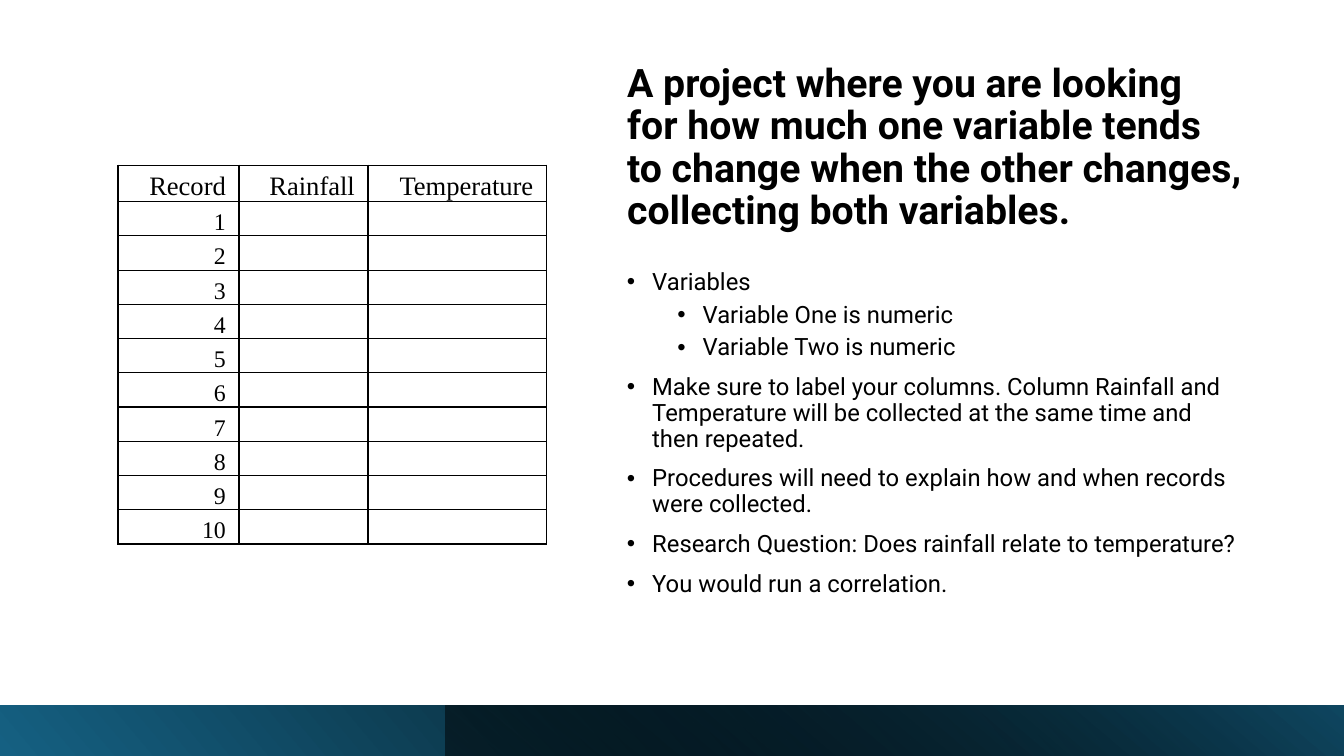
from dataclasses import dataclass

import lxml.etree
import pptx
import pptx.dml.color
import pptx.enum.shapes
import pptx.enum.text
import pptx.oxml.ns
import pptx.util

Inches = pptx.util.Inches
Pt = pptx.util.Pt
qn = pptx.oxml.ns.qn

BLACK = "000000"
TITLE = (
    "A project where you are looking for how much one variable tends "
    "to change when the other changes, collecting both variables."
)
HEADINGS = ("Record", "Rainfall", "Temperature")
COLUMN_WIDTHS = (1.2, 1.28, 1.77)
RECORD_COUNT = 10
HEADING_HEIGHT = 0.36
RECORD_HEIGHT = 0.34


@dataclass(frozen=True)
class Point:
    text: str
    level: int = 0


@dataclass(frozen=True)
class GradientStop:
    position: float
    colour: str
    opacity: int = 100


@dataclass(frozen=True)
class Band:
    left: float
    width: float
    angle: float
    stops: tuple[GradientStop, GradientStop]


POINTS = (
    Point("Variables"),
    Point("Variable One is numeric", 1),
    Point("Variable Two is numeric", 1),
    Point("Make sure to label your columns. Column Rainfall and Temperature "
          "will be collected at the same time and then repeated."),
    Point("Procedures will need to explain how and when records were collected."),
    Point("Research Question: Does rainfall relate to temperature?"),
    Point("You would run a correlation."),
)
BANDS = (
    Band(0, 13.33, 40, (GradientStop(0, "156082"), GradientStop(0.9, BLACK))),
    Band(4.42, 8.91, 50, (GradientStop(0, BLACK, 50), GradientStop(1, "104862"))),
)


def rgb(colour: str) -> pptx.dml.color.RGBColor:
    return pptx.dml.color.RGBColor.from_string(colour)


def set_font(paragraph, name: str, size: float, bold: bool = False) -> None:
    paragraph.font.name = name
    paragraph.font.size = Pt(size)
    paragraph.font.bold = bold
    paragraph.font.color.rgb = rgb(BLACK)


def write_title(slide) -> None:
    title = slide.shapes.title
    title.left, title.top = Inches(6.12), Inches(0.54)
    title.width, title.height = Inches(6.29), Inches(1.82)
    frame = title.text_frame
    frame.text = TITLE
    frame.word_wrap = True
    frame.auto_size = pptx.enum.text.MSO_AUTO_SIZE.NONE
    frame.vertical_anchor = pptx.enum.text.MSO_ANCHOR.BOTTOM
    heading = frame.paragraphs[0]
    heading.alignment = pptx.enum.text.PP_ALIGN.LEFT
    heading.line_spacing = 0.9
    set_font(heading, "Roboto", 28, bold=True)


def write_points(slide) -> None:
    box = slide.shapes.add_textbox(Inches(6.12), Inches(2.63), Inches(6.29), Inches(3.5))
    frame = box.text_frame
    frame.word_wrap = True
    for index, point in enumerate(POINTS):
        paragraph = frame.add_paragraph() if index else frame.paragraphs[0]
        paragraph.text = point.text
        paragraph.level = point.level
        paragraph.line_spacing = 0.9
        paragraph.space_before = Pt(5 if point.level else 10)
        set_font(paragraph, "Roboto", 17)
        properties = paragraph._p.get_or_add_pPr()
        properties.set("marL", str(Inches(0.25 + 0.5 * point.level)))
        properties.set("indent", str(Inches(-0.25)))
        bullet_font = lxml.etree.Element(qn("a:buFont"), typeface="Arial")
        bullet = lxml.etree.Element(qn("a:buChar"), char="•")
        spacing = properties.find(qn("a:spcBef"))
        spacing.addnext(bullet_font)
        bullet_font.addnext(bullet)


def draw_band(slide, band: Band) -> None:
    bar = slide.shapes.add_shape(
        pptx.enum.shapes.MSO_SHAPE.RECTANGLE,
        Inches(band.left), Inches(7), Inches(band.width), Inches(0.5),
    )
    bar.shadow.inherit = False
    bar.line.fill.background()
    bar.fill.gradient()
    bar.fill.gradient_angle = band.angle
    for target, stop in zip(bar.fill.gradient_stops, band.stops):
        target.position = stop.position
        target.color.rgb = rgb(stop.colour)
    for colour, stop in zip(bar._element.spPr.iter(qn("a:srgbClr")), band.stops):
        if stop.opacity < 100:
            lxml.etree.SubElement(colour, qn("a:alpha"), val=str(stop.opacity * 1000))


def add_borders(cell) -> None:
    properties = cell._tc.get_or_add_tcPr()
    for side in ("a:lnL", "a:lnR", "a:lnT", "a:lnB"):
        border = lxml.etree.SubElement(properties, qn(side), w=str(Pt(1)))
        fill = lxml.etree.SubElement(border, qn("a:solidFill"))
        lxml.etree.SubElement(fill, qn("a:srgbClr"), val=BLACK)


def write_cell(cell, text: str, size: float) -> None:
    add_borders(cell)
    cell.fill.background()
    cell.margin_left = cell.margin_right = Inches(0.13)
    cell.margin_top, cell.margin_bottom = Inches(0.02), Inches(0)
    cell.vertical_anchor = pptx.enum.text.MSO_ANCHOR.BOTTOM
    cell.text = text
    paragraph = cell.text_frame.paragraphs[0]
    paragraph.alignment = pptx.enum.text.PP_ALIGN.RIGHT
    paragraph.line_spacing = 1.07
    set_font(paragraph, "Times New Roman", size)


def draw_records(slide) -> None:
    rows = [HEADINGS] + [(str(number), "", "") for number in range(1, RECORD_COUNT + 1)]
    height = HEADING_HEIGHT + RECORD_COUNT * RECORD_HEIGHT
    records = slide.shapes.add_table(
        len(rows), len(HEADINGS), Inches(1.17), Inches(1.64),
        Inches(sum(COLUMN_WIDTHS)), Inches(height),
    ).table
    records.first_row = False
    records.horz_banding = False
    for column, width in zip(records.columns, COLUMN_WIDTHS):
        column.width = Inches(width)
    for index, texts in enumerate(rows):
        records.rows[index].height = Inches(RECORD_HEIGHT if index else HEADING_HEIGHT)
        for column, text in enumerate(texts):
            write_cell(records.cell(index, column), text, 17 if index else 19)


def main() -> None:
    """Build the slide on collecting two numeric variables for a correlation."""
    presentation = pptx.Presentation()
    presentation.slide_width = Inches(13.33)
    presentation.slide_height = Inches(7.5)
    slide = presentation.slides.add_slide(presentation.slide_layouts.get_by_name("Title Only"))
    write_title(slide)
    write_points(slide)
    for band in BANDS:
        draw_band(slide, band)
    draw_records(slide)
    presentation.save("out.pptx")


if __name__ == "__main__":
    main()
